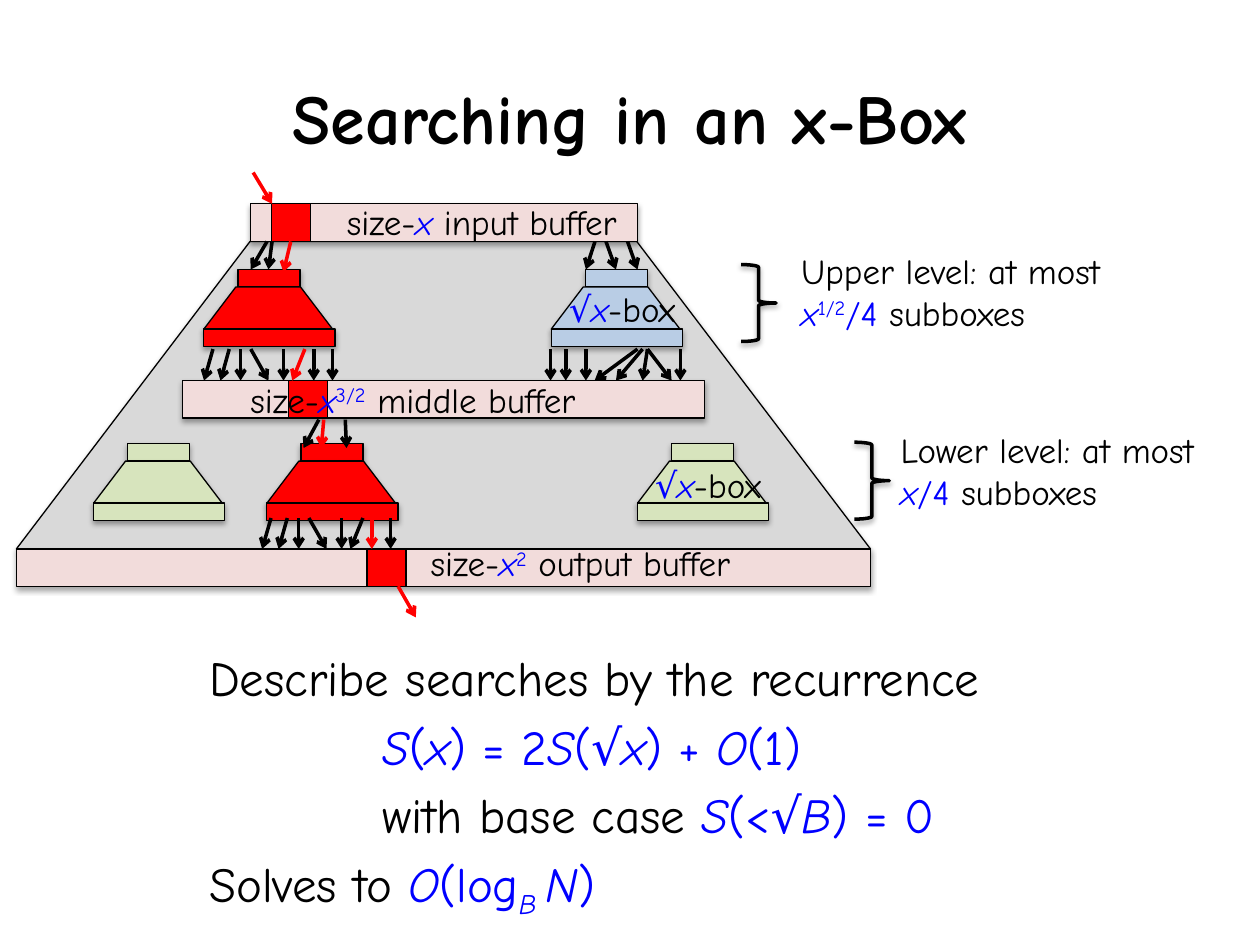
from dataclasses import dataclass
from lxml.etree import SubElement
from pptx import Presentation
from pptx.dml.color import RGBColor as RGB
from pptx.enum.shapes import MSO_CONNECTOR as LINK, MSO_SHAPE as SHAPE
from pptx.enum.text import MSO_ANCHOR as ANCHOR, MSO_AUTO_SIZE as FIT, PP_ALIGN as ALIGN
from pptx.oxml.ns import qn
from pptx.util import Pt


@dataclass(frozen=True)
class Theme:
    font: str = "Comic Neue"
    title_size: int = 40
    body_size: int = 28
    label_size: int = 20
    ink: str = "000000"
    math: str = "0000FF"
    search: str = "FF0000"
    buffer: str = "F2DCDB"
    frame: str = "D9D9D9"
    upper: str = "B9CDE5"
    lower: str = "D7E4BD"
    outline: float = 0.75
    stroke: float = 2


THEME = Theme()
FORMATS = {
    "plain": {"italic": False},
    "blue": {"italic": False},
    "var": {"italic": True},
    "sup": {"italic": False},
    "sub": {"italic": True},
}
BASELINES = {"sup": "30000", "sub": "-25000"}
SLOPE = 0.76


def assign(target, values):
    for key, value in values.items():
        setattr(target, key, value)


class Board:
    def __init__(self, slide, theme):
        self.slide, self.theme = slide, theme

    def add_runs(self, paragraph, runs, size, bold=False):
        for words, kind in runs:
            run = paragraph.add_run()
            run.text = words
            assign(run.font, {"name": self.theme.font, "size": Pt(size), "bold": bold, **FORMATS[kind]})
            colour = self.theme.ink if kind == "plain" else self.theme.math
            run.font.color.rgb = RGB.from_string(colour)
            if kind in BASELINES:
                run.font._element.set("baseline", BASELINES[kind])

    def place(self, holder, left, top, width, height):
        assign(holder, {"left": Pt(left), "top": Pt(top), "width": Pt(width), "height": Pt(height)})

    def title(self, words, *box):
        heading = self.slide.shapes.title
        self.place(heading, *box)
        heading.text_frame.vertical_anchor = ANCHOR.MIDDLE
        paragraph = heading.text_frame.paragraphs[0]
        paragraph.alignment = ALIGN.CENTER
        self.add_runs(paragraph, [(words, "plain")], self.theme.title_size, True)

    def body(self, lines, *box):
        holder = self.slide.placeholders[1]
        self.place(holder, *box)
        frame = holder.text_frame
        assign(frame, {"auto_size": FIT.NONE, "vertical_anchor": ANCHOR.TOP})
        for index, (margin, runs) in enumerate(lines):
            paragraph = frame.add_paragraph() if index else frame.paragraphs[0]
            props = paragraph._element.get_or_add_pPr()
            for key, value in {"marL": margin, "indent": 0}.items():
                props.set(key, str(Pt(value)))
            SubElement(props, qn("a:buNone"))
            self.add_runs(paragraph, runs, self.theme.body_size)

    def label(self, runs, left, top, width, height=31.5, wrap=True, align=ALIGN.LEFT):
        holder = self.slide.shapes.add_textbox(Pt(left), Pt(top), Pt(width), Pt(height))
        assign(holder.text_frame, {"word_wrap": wrap, "auto_size": FIT.SHAPE_TO_FIT_TEXT})
        paragraph = holder.text_frame.paragraphs[0]
        paragraph.alignment = align
        self.add_runs(paragraph, runs, self.theme.label_size)

    def block(self, kind, left, top, width, height, fill=None, weight=None,
              adjust=(), shadow=True, parent=None):
        shapes = (parent or self.slide).shapes
        block = shapes.add_shape(kind, Pt(left), Pt(top), Pt(width), Pt(height))
        for index, value in enumerate(adjust):
            block.adjustments[index] = value
        if fill:
            block.fill.solid()
            block.fill.fore_color.rgb = RGB.from_string(fill)
        else:
            block.fill.background()
        block.line.color.rgb = RGB.from_string(self.theme.ink)
        block.line.width = Pt(weight or self.theme.outline)
        block.shadow.inherit = False
        if shadow:
            effects = block._element.spPr.find(qn("a:effectLst"))
            outer = SubElement(effects, qn("a:outerShdw"), blurRad=str(Pt(3.1)),
                               dist=str(Pt(1.8)), dir="5400000", rotWithShape="0")
            tint = SubElement(outer, qn("a:srgbClr"), val=self.theme.ink)
            SubElement(tint, qn("a:alpha"), val="35000")
        return block

    def subbox(self, left, top, fill):
        group = self.slide.shapes.add_group_shape()
        self.block(SHAPE.RECTANGLE, left + 19.5, top, 35.5, 10, fill, parent=group)
        self.block(SHAPE.TRAPEZOID, left, top + 10, 73.5, 24, fill, adjust=[SLOPE], parent=group)
        self.block(SHAPE.RECTANGLE, left, top + 34, 75, 10, fill, parent=group)

    def brace(self, left, top):
        self.block(SHAPE.RIGHT_BRACE, left, top, 20, 44, weight=self.theme.stroke, adjust=[0.08, 0.5])

    def arrow(self, x1, y1, x2, y2, colour):
        arrow = self.slide.shapes.add_connector(LINK.STRAIGHT, Pt(x1), Pt(y1), Pt(x2), Pt(y2))
        arrow.line.color.rgb = RGB.from_string(colour)
        arrow.line.width = Pt(self.theme.stroke)
        SubElement(arrow.line._get_or_add_ln(), qn("a:tailEnd"), type="arrow")
        SubElement(arrow._element.spPr, qn("a:effectLst"))
        return arrow

    def fan(self, y1, y2, spans, searched=None, shift=0):
        for index, (x1, x2) in enumerate(spans):
            colour = self.theme.search if index == searched else self.theme.ink
            self.arrow(x1 + shift, y1, x2 + shift, y2, colour)


def main():
    deck = Presentation()
    assign(deck, {"slide_width": Pt(720), "slide_height": Pt(540)})
    board = Board(deck.slides.add_slide(deck.slide_layouts[1]), THEME)

    board.title("Searching in an x-Box", 36, 21.6, 648, 90)
    board.body([
        (0, [("Describe searches by the recurrence", "plain")]),
        (99, [("S", "var"), ("(", "blue"), ("x", "var"), (") = 2", "blue"), ("S", "var"),
              ("(", "blue"), ("√x", "var"), (") + ", "blue"), ("O", "var"), ("(1)", "blue")]),
        (99, [("with base case ", "plain"), ("S", "var"), ("(<", "blue"), ("√B", "var"), (") = 0", "blue")]),
        (0, [("Solves to ", "plain"), ("O", "var"), ("(log", "blue"), ("B ", "sub"),
             ("N", "var"), (")", "blue")]),
    ], 112.3, 366.5, 511, 166.3)

    board.block(SHAPE.TRAPEZOID, 9.4, 138, 488, 175.7, THEME.frame, adjust=[SLOPE])
    for left, top, width in [(143.3, 116.5, 221), (104.4, 217.5, 298), (9.4, 313.7, 488)]:
        board.block(SHAPE.RECTANGLE, left, top, width, 21.5, THEME.buffer)
    searched_cells = [
        board.block(SHAPE.RECTANGLE, left, top, 22.3, 21.5, THEME.search, shadow=False)
        for left, top in [(155, 116.5), (165, 217.5), (209.7, 313.7)]]

    for left, top, fill in [(116.5, 154, THEME.search), (315, 154, THEME.upper),
                            (53.5, 253.5, THEME.lower), (152.5, 253.5, THEME.search),
                            (364.3, 253.5, THEME.lower)]:
        board.subbox(left, top, fill)

    root = [("√", "blue"), ("x", "var"), ("-box", "plain")]
    for left, top in [(318.2, 160.5), (367.2, 261.3)]:
        board.label(root, left, top, 82, wrap=False)
    board.label([("Upper level: at most ", "plain"), ("x", "var"), ("1/2", "sup"),
                 ("/4 ", "blue"), ("subboxes", "plain")], 450.7, 139, 212.5, 55.5)
    board.label([("Lower level: at most ", "plain"), ("x", "var"), ("/4 ", "blue"),
                 ("subboxes", "plain")], 507.6, 241.2, 212.4, 55.5)
    board.brace(423.5, 151.2)
    board.brace(488.2, 252.7)

    board.fan(138, 154, [(152.6, 143.3), (155.5, 153.4), (340, 334.8), (346.3, 352), (358.6, 364.3)])
    board.arrow(166, 138, 162, 155.5, THEME.search).begin_connect(searched_cells[0], 2)
    box_outputs = [(121.7, 116.6), (131, 126), (137.5, 137.5), (143.3, 153.4),
                   (162, 162), (174.2, 167), (179.3, 179.3), (190, 190)]
    board.fan(199.5, 217.5, box_outputs, searched=5)
    board.fan(199.5, 217.5, [(314.6, 314.6), (323.3, 323.3), (334.8, 334.8), (364.3, 339.8),
                             (367.2, 352), (370, 367.2), (370, 383.8), (388.8, 388.8)])
    board.fan(239.8, 256, [(182.2, 173.5), (185, 183.6), (197.3, 198)], searched=1)
    board.fan(296, 313.7, box_outputs, searched=6, shift=33.2)
    board.arrow(144.7, 98.6, 155.5, 116.5, THEME.search)
    board.arrow(227.5, 335, 237.6, 352.8, THEME.search)

    board.label([("size-", "plain"), ("x", "var"), (" input buffer", "plain")],
                177.8, 111, 195, wrap=False, align=ALIGN.CENTER)
    board.label([("size-", "plain"), ("x", "var"), ("3/2", "sup"), (" middle buffer", "plain")],
                136, 212.5, 244)
    board.label([("size-", "plain"), ("x", "var"), ("2", "sup"), (" output buffer", "plain")],
                239, 306, 224.6)
    deck.save("out.pptx")


if __name__ == "__main__":
    main()
